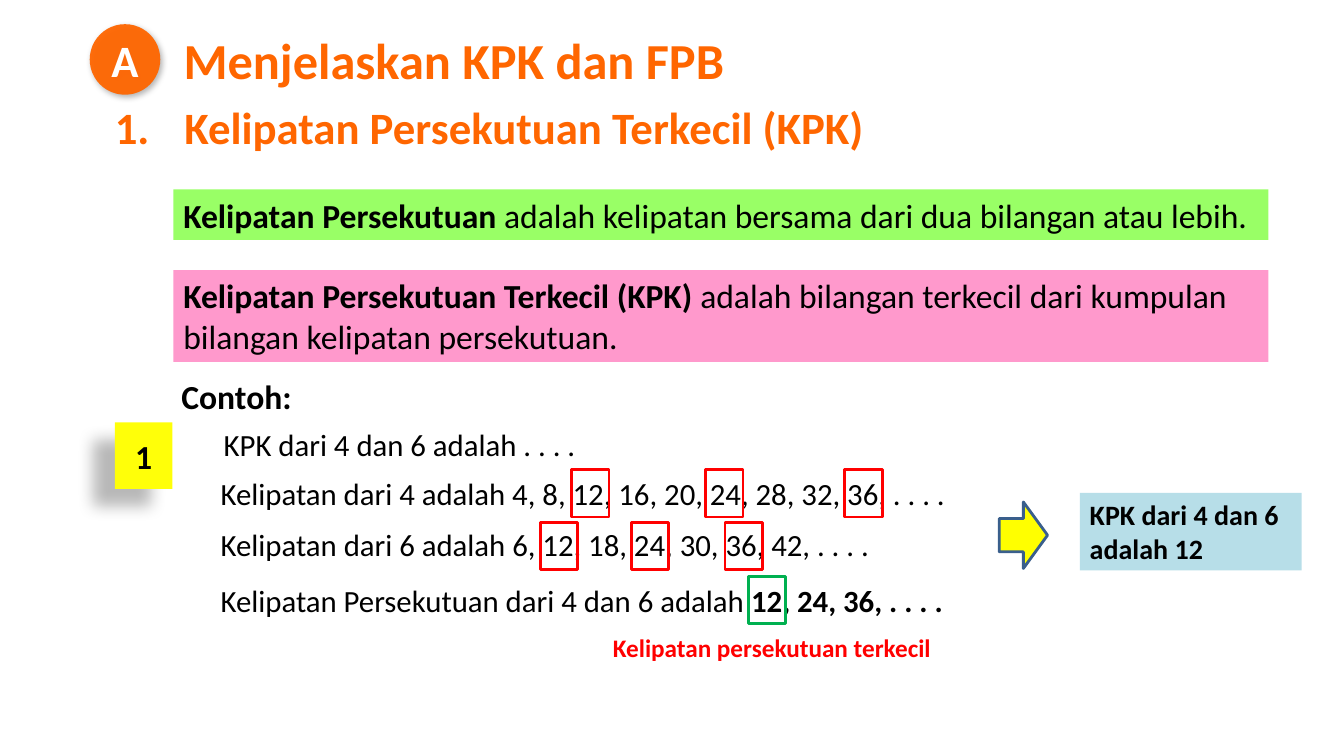
from lxml import etree
from pptx import Presentation
from pptx.dml.color import RGBColor
from pptx.enum.shapes import MSO_SHAPE
from pptx.enum.text import MSO_ANCHOR, MSO_AUTO_SIZE, PP_ALIGN
from pptx.oxml.ns import qn
from pptx.util import Inches, Pt

RECT = MSO_SHAPE.RECTANGLE
OVAL = MSO_SHAPE.OVAL
ARROW = MSO_SHAPE.RIGHT_ARROW
TOP, MIDDLE = MSO_ANCHOR.TOP, MSO_ANCHOR.MIDDLE
LEFT, CENTER = PP_ALIGN.LEFT, PP_ALIGN.CENTER
NO_FIT = MSO_AUTO_SIZE.NONE

FONT = "Calibri"
BLACK = RGBColor(0x00, 0x00, 0x00)
WHITE = RGBColor(0xFF, 0xFF, 0xFF)
ORANGE = RGBColor(0xFF, 0x66, 0x00)
LIME = RGBColor(0x99, 0xFF, 0x66)
PINK = RGBColor(0xFF, 0x99, 0xCC)
SKY = RGBColor(0xB7, 0xDE, 0xE8)
YELLOW = RGBColor(0xFF, 0xFF, 0x00)
LEMON = RGBColor(0xFF, 0xFF, 0x09)
RED = RGBColor(0xFF, 0x00, 0x00)
GREEN = RGBColor(0x00, 0xB0, 0x50)
NAVY = RGBColor(0x3A, 0x5F, 0x8C)


def write(frame, parts, size, color=BLACK, align=LEFT, anchor=TOP, wrap=True):
    frame.word_wrap = wrap
    frame.auto_size = NO_FIT
    frame.vertical_anchor = anchor
    para = frame.paragraphs[0]
    para.alignment = align
    for words, bold in parts:
        run = para.add_run()
        run.text = words
        run.font.name = FONT
        run.font.size = Pt(size)
        run.font.bold = bold
        run.font.color.rgb = color
    return para


def add_label(slide, box, parts, size, color=BLACK):
    label = slide.shapes.add_textbox(*map(Inches, box))
    return write(label.text_frame, parts, size, color, wrap=False)


def add_block(slide, kind, box, fill=None, line=None):
    block = slide.shapes.add_shape(kind, *map(Inches, box))
    block.shadow.inherit = False
    if fill is None:
        block.fill.background()
    else:
        block.fill.solid()
        block.fill.fore_color.rgb = fill
    if line is None:
        block.line.fill.background()
    else:
        block.line.color.rgb = line
        block.line.width = Pt(2)
    return block


def add_panel(slide, box, fill, parts, size):
    panel = add_block(slide, RECT, box, fill)
    write(panel.text_frame, parts, size)


def set_alpha(color, percent):
    alpha = etree.SubElement(color, qn("a:alpha"))
    alpha.set("val", str(percent * 1000))


def add_shadow(block, alpha, blur, dist, angle):
    effects = block._element.spPr.find(qn("a:effectLst"))
    shadow = etree.SubElement(effects, qn("a:outerShdw"))
    shadow.set("blurRad", str(Pt(blur)))
    shadow.set("dist", str(Pt(dist)))
    shadow.set("dir", str(angle * 60000))
    shadow.set("rotWithShape", "0")
    color = etree.SubElement(shadow, qn("a:srgbClr"))
    color.set("val", "000000")
    set_alpha(color, alpha)


def add_badge(slide, kind, box, fill, mark, size, color, shadow):
    badge = add_block(slide, kind, box, fill)
    add_shadow(badge, *shadow)
    frame = badge.text_frame
    frame.margin_left = frame.margin_right = 0
    frame.margin_top = frame.margin_bottom = 0
    write(frame, [(mark, True)], size, color, CENTER, MIDDLE)
    return badge


def add_title(slide):
    title = slide.shapes.title
    title.left, title.top = Inches(1.72), Inches(0.24)
    title.width, title.height = Inches(5.62), Inches(0.71)
    write(title.text_frame, [("Menjelaskan KPK dan FPB", True)], 36, ORANGE, wrap=False)


def add_heading(slide):
    words = "1.\tKelipatan Persekutuan Terkecil (KPK)"
    para = add_label(slide, (1.04, 0.94, 7.7, 0.64), [(words, True)], 32, ORANGE)
    tabs = etree.SubElement(para._p.get_or_add_pPr(), qn("a:tabLst"))
    tab = etree.SubElement(tabs, qn("a:tab"))
    tab.set("pos", str(Inches(0.69)))
    tab.set("algn", "l")


def main():
    deck = Presentation()
    deck.slide_width, deck.slide_height = Inches(13.33), Inches(7.5)
    slide = deck.slides.add_slide(deck.slide_layouts[5])

    add_title(slide)
    disc = add_badge(slide, OVAL, (0.89, 0.24, 0.7, 0.7), ORANGE, "A", 32, WHITE,
                     (30, 4.5, 2.6, 53))
    set_alpha(disc._element.spPr.find(qn("a:solidFill"))[0], 95)
    add_heading(slide)

    add_panel(slide, (1.72, 1.88, 10.86, 0.5), LIME, [
        ("Kelipatan Persekutuan ", True),
        ("adalah kelipatan bersama dari dua bilangan atau lebih.", False)], 24)
    add_panel(slide, (1.72, 2.68, 10.86, 0.91), PINK, [
        ("Kelipatan Persekutuan Terkecil (KPK) ", True),
        ("adalah bilangan terkecil dari kumpulan bilangan kelipatan persekutuan.", False)], 24)

    add_label(slide, (1.7, 3.68, 1.31, 0.5), [("Contoh:", True)], 24)
    add_badge(slide, RECT, (1.14, 4.19, 0.57, 0.66), LEMON, "1", 24, BLACK,
              (28, 11.8, 19.7, 141))

    rows = [
        (2.12, 4.17, 3.72, [("KPK dari 4 dan 6 adalah . . . .", False)]),
        (2.09, 4.66, 7.46,
         [("Kelipatan dari 4 adalah 4, 8, 12, 16, 20, 24, 28, 32, 36, . . . .", False)]),
        (2.09, 5.17, 6.85,
         [("Kelipatan dari 6 adalah 6, 12, 18, 24, 30, 36, 42, . . . .", False)]),
        (2.09, 5.72, 7.44,
         [("Kelipatan Persekutuan dari 4 dan 6 adalah ", False),
          ("12, 24, 36, . . . .", True)]),
    ]
    for left, top, width, parts in rows:
        add_label(slide, (left, top, width, 0.47), parts, 22)

    frames = [
        (4.66, RED, (5.67, 7, 8.38)),
        (5.18, RED, (5.36, 6.26, 7.19)),
        (5.72, GREEN, (7.42,)),
    ]
    for top, color, lefts in frames:
        for left in lefts:
            add_block(slide, RECT, (left, top, 0.37, 0.47), line=color)

    add_label(slide, (5.98, 6.22, 3.38, 0.4),
              [("Kelipatan persekutuan terkecil", True)], 18, RED)
    add_block(slide, ARROW, (9.91, 4.98, 0.48, 0.66), YELLOW, NAVY)
    add_panel(slide, (10.71, 4.89, 2.2, 0.77), SKY,
              [("KPK dari 4 dan 6 adalah 12", True)], 20)

    deck.save("out.pptx")


if __name__ == "__main__":
    main()
